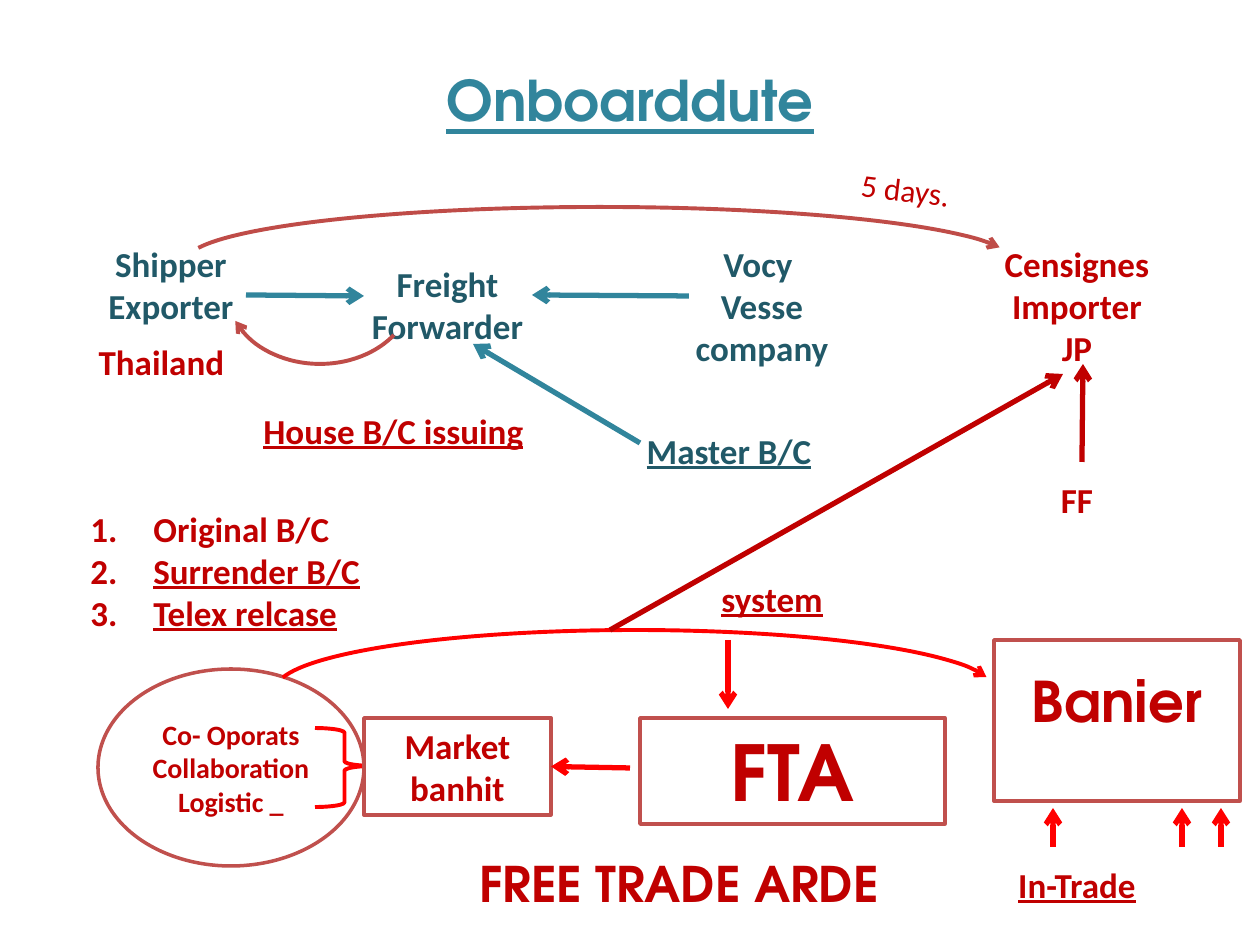
from lxml import etree
from pptx import Presentation
from pptx.dml.color import RGBColor
from pptx.enum.shapes import MSO_CONNECTOR, MSO_SHAPE
from pptx.enum.text import MSO_ANCHOR, MSO_AUTO_SIZE, PP_ALIGN
from pptx.oxml.ns import qn
from pptx.util import Pt

EMU_PER_PX = 914400 / 126
WHITE = RGBColor(0xFF, 0xFF, 0xFF)
TEAL = RGBColor(0x31, 0x85, 0x9C)
DARK_TEAL = RGBColor(0x21, 0x59, 0x68)
DARK_RED = RGBColor(0xC0, 0x00, 0x00)
RED = RGBColor(0xFF, 0x00, 0x00)
BRICK = RGBColor(0xC0, 0x50, 0x4D)
ARC_BRICK = RGBColor(0xBF, 0x4C, 0x48)
BODY_FONT = "Calibri"
DISPLAY_FONT = "TeX Gyre Adventor"
RECTANGLE, OVAL = MSO_SHAPE.RECTANGLE, MSO_SHAPE.OVAL
ARC, RIGHT_BRACE = MSO_SHAPE.ARC, MSO_SHAPE.RIGHT_BRACE
STRAIGHT = MSO_CONNECTOR.STRAIGHT
CENTER, LEFT = PP_ALIGN.CENTER, PP_ALIGN.LEFT
TOP, MIDDLE = MSO_ANCHOR.TOP, MSO_ANCHOR.MIDDLE
FIT_SHAPE = MSO_AUTO_SIZE.SHAPE_TO_FIT_TEXT
NO_FIT = MSO_AUTO_SIZE.NONE
LEFT_SIDE, RIGHT_SIDE = 1, 3


def px(*lengths):
    return [round(length * EMU_PER_PX) for length in lengths]


def add_run(paragraph, text, color, size=20, font=BODY_FONT, bold=True, underline=False):
    run = paragraph.add_run()
    run.text = text
    run.font.name = font
    run.font.size = Pt(size)
    run.font.bold = bold
    run.font.underline = underline
    run.font.color.rgb = color
    return run


def write_lines(shape, lines, color, align=CENTER, anchor=TOP, fit=FIT_SHAPE, **style):
    frame = shape.text_frame
    frame.word_wrap = True
    frame.auto_size = fit
    frame.vertical_anchor = anchor
    for index, line in enumerate(lines):
        paragraph = frame.add_paragraph() if index else frame.paragraphs[0]
        paragraph.alignment = align
        add_run(paragraph, line, color, **style)
    return frame


def add_box(slide, box, lines, color=DARK_RED, line=WHITE, kind=RECTANGLE, **style):
    shape = slide.shapes.add_shape(kind, *px(*box))
    shape.shadow.inherit = False
    shape.fill.solid()
    shape.fill.fore_color.rgb = WHITE
    if line is None:
        shape.line.fill.background()
    else:
        shape.line.color.rgb = line
        shape.line.width = Pt(2)
    write_lines(shape, lines, color, **style)
    return shape


def add_text(slide, box, lines, color, **style):
    shape = slide.shapes.add_textbox(*px(*box))
    write_lines(shape, lines, color, **style)
    return shape


def add_arrowhead(shape, end="tailEnd"):
    outline = shape.line._get_or_add_ln()
    etree.SubElement(outline, qn("a:" + end), type="arrow")


def add_outline(slide, kind, box, color, adjustments):
    shape = slide.shapes.add_shape(kind, *px(*box))
    shape.shadow.inherit = False
    shape.fill.background()
    shape.line.color.rgb = color
    shape.line.width = Pt(2.25)
    for index, value in enumerate(adjustments):
        shape.adjustments[index] = value
    return shape


def add_arrow(slide, start, end, color):
    connector = slide.shapes.add_connector(STRAIGHT, *px(*start, *end))
    connector.line.color.rgb = color
    connector.line.width = Pt(3)
    add_arrowhead(connector)
    etree.SubElement(connector._element.spPr, qn("a:effectLst"))
    return connector


def number_paragraphs(frame):
    for paragraph in frame.paragraphs:
        properties = paragraph._p.get_or_add_pPr()
        properties.set("marL", "457200")
        properties.set("indent", "-457200")
        etree.SubElement(properties, qn("a:buFont"), typeface="+mj-lt")
        etree.SubElement(properties, qn("a:buAutoNum"), type="arabicPeriod")


def add_title(slide):
    title = slide.shapes.title
    title.left, title.top, title.width, title.height = px(63, 59, 1134, 816)
    write_lines(title, ["Onboarddute"], TEAL, fit=NO_FIT,
                size=32, font=DISPLAY_FONT, underline=True)


def add_parties(slide):
    shipper = add_text(slide, (78, 236, 186, 158),
                       ["Shipper", "Exporter", "Thailand "], DARK_TEAL)
    country = shipper.text_frame.paragraphs[2]
    country.runs[0].font.color.rgb = DARK_RED
    add_run(country, " ", DARK_TEAL, size=28)
    add_box(slide, (344, 256, 207, 97), ["Freight", "Forwarder"], DARK_TEAL)
    add_box(slide, (669, 236, 186, 140), ["Vocy ", "Vesse", "company"], DARK_TEAL)
    add_box(slide, (984, 236, 186, 140), ["Censignes", "Importer", "JP"], line=None)
    add_box(slide, (984, 472, 186, 55), ["FF"])


def add_documents(slide):
    add_box(slide, (679, 571, 186, 55), ["system"], underline=True)
    add_box(slide, (236, 403, 315, 55), ["House B/C issuing"], underline=True)
    releases = add_box(slide, (78, 501, 325, 140),
                       ["Original B/C", "Surrender B/C", "Telex relcase"], align=LEFT)
    number_paragraphs(releases.text_frame)
    for paragraph in releases.text_frame.paragraphs[1:]:
        paragraph.runs[0].font.underline = True
    add_box(slide, (601, 423, 256, 55), ["Master B/C"], DARK_TEAL, underline=True)


def add_trade_area(slide):
    add_box(slide, (98, 669, 266, 197), ["Co- Oporats", "Collaboration", "Logistic _"],
            line=BRICK, kind=OVAL, anchor=MIDDLE, fit=NO_FIT, size=16)
    add_outline(slide, RIGHT_BRACE, (315, 728, 59, 79), RED, (0.08, 0.48))
    market = add_box(slide, (364, 718, 187, 97), ["Market", "banhit"], line=BRICK)
    add_box(slide, (640, 718, 305, 106), ["FTA"], line=BRICK, size=44, font=DISPLAY_FONT)
    add_box(slide, (354, 847, 650, 72), ["FREE TRADE ARDE"], size=28, font=DISPLAY_FONT)
    barrier = add_box(slide, (994, 640, 246, 161), ["Banier"], line=BRICK, fit=NO_FIT,
                      size=32, font=DISPLAY_FONT)
    barrier.text_frame.margin_top = px(27)[0]
    add_box(slide, (984, 857, 186, 55), ["In-Trade"], underline=True)
    return market


def add_flows(slide, market):
    # Curved routes
    for box, color in (((186, 207, 827, 108), ARC_BRICK), ((276, 630, 718, 118), RED)):
        add_arrowhead(add_outline(slide, ARC, box, color, (109.12, 214.83)))
    returning = add_outline(slide, ARC, (227, 217, 186, 147), ARC_BRICK, (119.88, 197.36))
    returning._element.spPr.xfrm.set("flipV", "1")
    add_arrowhead(returning, "headEnd")
    days = add_text(slide, (849, 165, 129, 50), ["5 days."], DARK_RED,
                    align=LEFT, size=18, bold=False)
    days.rotation = 6.9

    # Straight routes
    for start, end, color in (
        ((246, 295), (364, 296), TEAL),
        ((689, 296), (532, 295), TEAL),
        ((640, 443), (473, 344), TEAL),
        ((1082, 462), (1083, 364), DARK_RED),
        ((610, 630), (1063, 374), DARK_RED),
        ((728, 640), (728, 709), RED),
    ):
        add_arrow(slide, start, end, color)
    to_market = add_arrow(slide, (630, 768), (551, 767), RED)
    to_market.end_connect(market, RIGHT_SIDE)

    # Pressure on the barrier
    for x in (1053, 1182, 1221):
        add_arrow(slide, (x, 847), (x, 808), RED)


def main():
    presentation = Presentation()
    presentation.slide_width, presentation.slide_height = px(1260, 945)
    slide = presentation.slides.add_slide(presentation.slide_layouts[5])
    add_title(slide)
    add_parties(slide)
    add_documents(slide)
    market = add_trade_area(slide)
    add_flows(slide, market)
    presentation.save("out.pptx")


if __name__ == "__main__":
    main()
